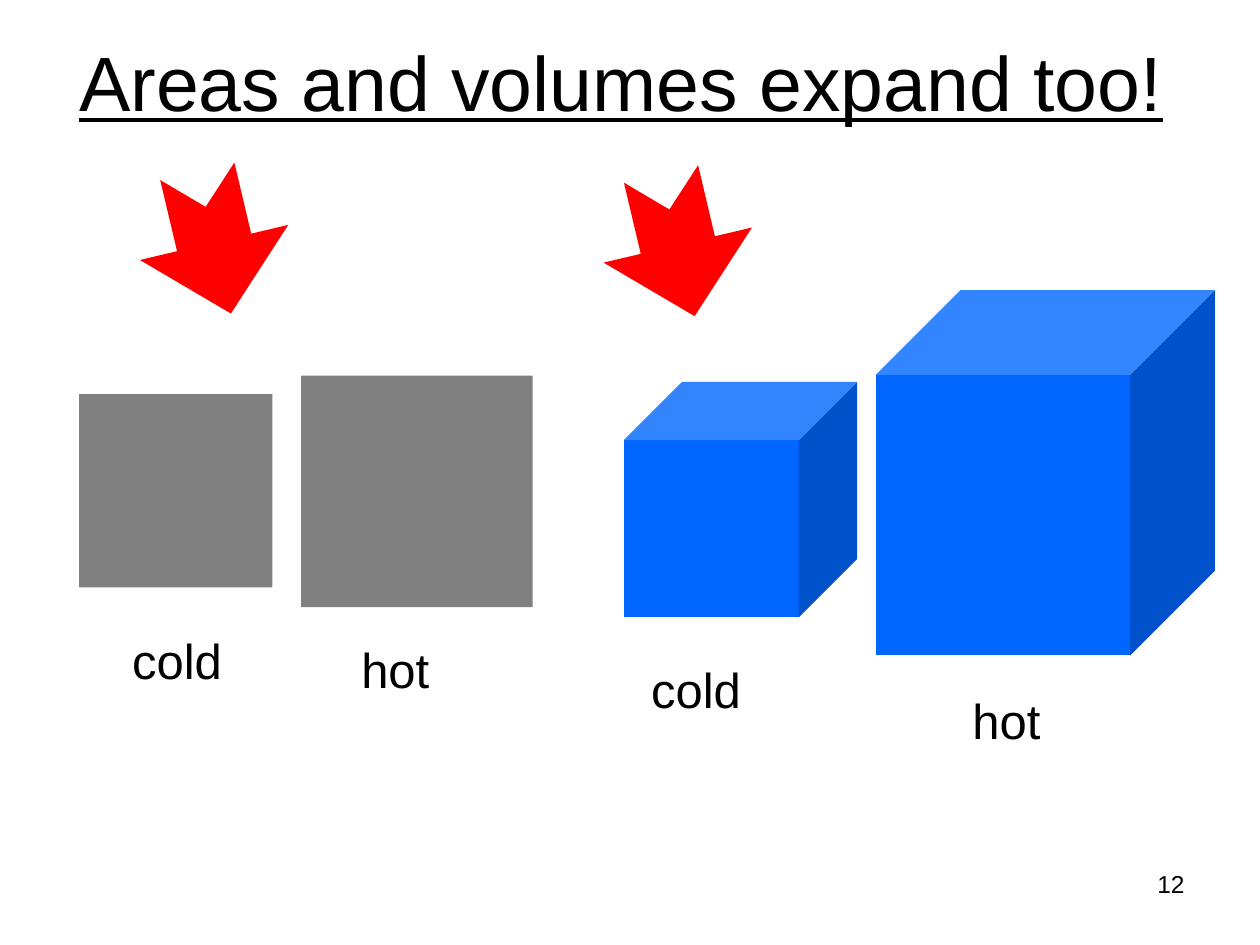
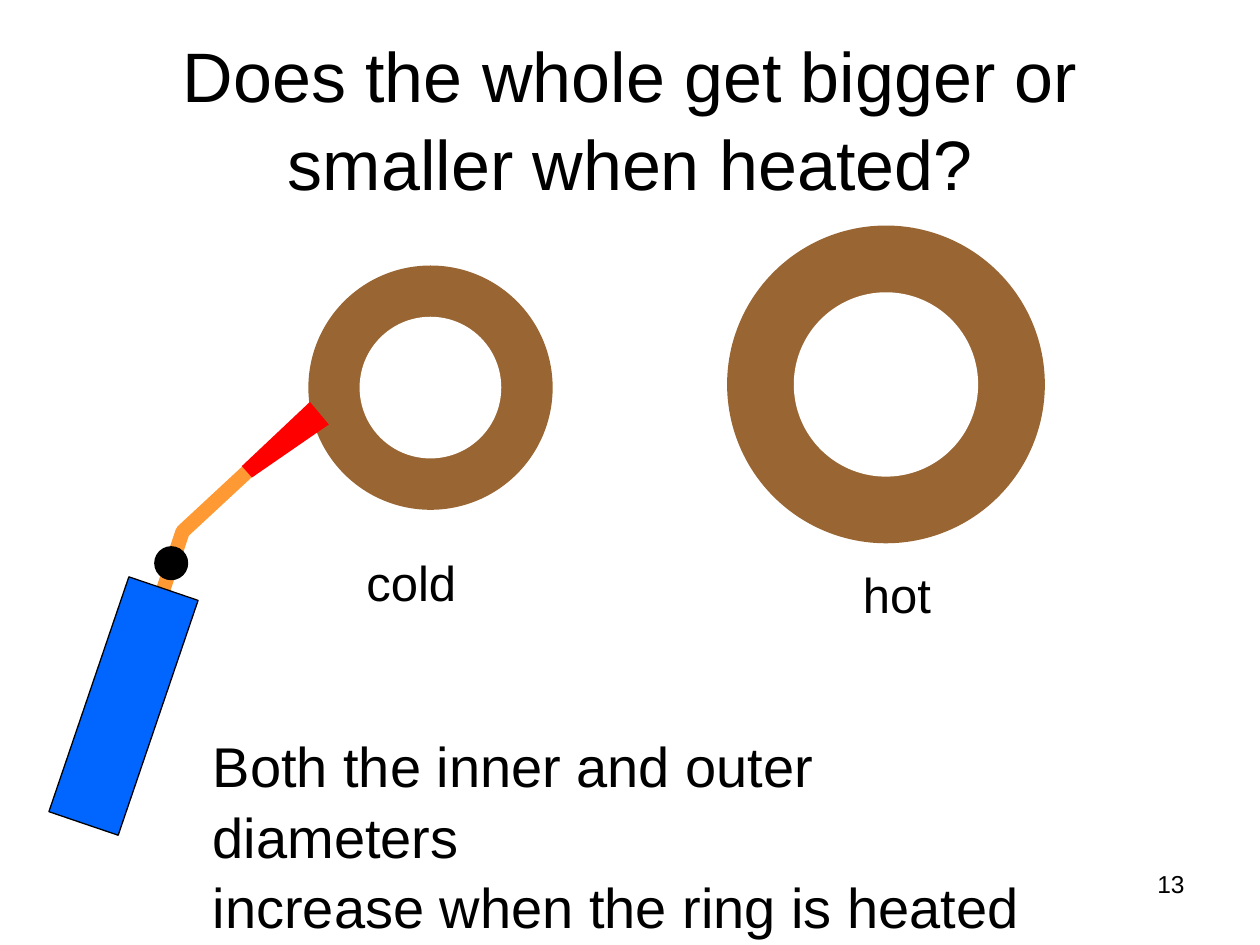
import pptx
import pptx.util
import pptx.dml.color
import pptx.enum.shapes
import pptx.enum.text
from dataclasses import dataclass

Pt = pptx.util.Pt
Shape = pptx.enum.shapes.MSO_SHAPE
Align = pptx.enum.text.PP_ALIGN
Anchor = pptx.enum.text.MSO_ANCHOR


@dataclass(frozen=True)
class Theme:
    font: str = "Arial"
    ink: str = "000000"
    paper: str = "FFFFFF"
    plate: str = "808080"
    blue: str = "0066FF"
    heat: str = "FF0000"
    ring: str = "996633"
    hose: str = "FF9933"
    label_size: float = 28
    answer_size: float = 32
    number_size: float = 14
    spacing: float = 1.05
    hole_ratio: float = 0.58
    outline: float = 0.75
    hose_width: float = 8.25


THEME = Theme()
LABEL_WIDTHS = {"cold": 66.2, "hot": 53.3}

EXPANSION = {
    "title": "Areas and volumes expand too!",
    "title_box": (31, 0, 648, 90),
    "title_font": {"size": Pt(44), "underline": True},
    "number": "12",
    "plates": [(45.2, 225.2, 110.4, 110.4), (172, 214.6, 132.4, 132.4)],
    "cubes": [(356.4, 218.2, 133.4, 134.6), (500.4, 165.8, 193.8, 208.8)],
    "arrows": [(80.6, 95, 83.5, 87.1), (345.6, 96.5, 83.5, 87.1)],
    "arrow_turn": 76.7,
    "labels": [("cold", 68.4, 355), ("hot", 199.4, 360),
               ("cold", 365, 371.5), ("hot", 548.6, 389.5)],
}

RING = {
    "title": "Does the whole get bigger or smaller when heated?",
    "title_box": (36, 21.6, 648, 90),
    "title_font": {"size": Pt(40)},
    "number": "13",
    "rings": [(246, 221.5, 139.6), (506.3, 219.7, 181.6)],
    "labels": [("cold", 202.3, 310.3), ("hot", 486, 317.5)],
    "answer": ["Both the inner and outer diameters",
               "increase when the ring is heated"],
    "answer_box": (114.5, 412.6, 500, 84),
    "hose": [(91.4, 342.7), (104.4, 303.8), (144.7, 266.4)],
    "flame": [(177.1, 229.7), (138.2, 266.4), (144, 272.9), (187.9, 242.6)],
    "valve": (88.5, 312.5, 18.7, 18.7),
    "tank": (49.7, 332.6, 41.8, 141.8),
    "tank_turn": 18.8,
}


def rgb(color):
    return pptx.dml.color.RGBColor.from_string(color)


def assign(target, values):
    for name, value in values.items():
        setattr(target, name, value)


def paint(shape, fill=None, line=None, width=THEME.outline):
    shape.shadow.inherit = False
    if fill:
        shape.fill.solid()
        shape.fill.fore_color.rgb = rgb(fill)
    else:
        shape.fill.background()
    if line:
        shape.line.color.rgb = rgb(line)
        shape.line.width = Pt(width)
    else:
        shape.line.fill.background()


def draw(shapes, kind, box, fill, line=None, turn=0):
    shape = shapes.add_shape(kind, *map(Pt, box))
    paint(shape, fill, line)
    shape.rotation = turn
    return shape


def trace(shapes, points, closed, **look):
    start, *rest = [(Pt(x), Pt(y)) for x, y in points]
    builder = shapes.build_freeform(*start)
    builder.add_line_segments(rest, close=closed)
    paint(builder.convert_to_shape(), **look)


def write(frame, lines, font, align=Align.LEFT, wrap=True, anchor=Anchor.TOP):
    assign(frame, {"word_wrap": wrap, "vertical_anchor": anchor,
                   "auto_size": pptx.enum.text.MSO_AUTO_SIZE.NONE})
    for index, line in enumerate(lines):
        paragraph = frame.add_paragraph() if index else frame.paragraphs[0]
        assign(paragraph, {"alignment": align, "line_spacing": THEME.spacing})
        run = paragraph.add_run()
        run.text = line
        assign(run.font, {"name": THEME.font, **font})
        run.font.color.rgb = rgb(THEME.ink)


def add_text(slide, box, lines, size, **layout):
    frame = slide.shapes.add_textbox(*map(Pt, box)).text_frame
    write(frame, lines, {"size": Pt(size)}, **layout)


def start_slide(deck, content):
    slide = deck.slides.add_slide(deck.slide_layouts[5])
    title = slide.shapes.title
    assign(title, dict(zip(("left", "top", "width", "height"),
                           map(Pt, content["title_box"]))))
    write(title.text_frame, [content["title"]], content["title_font"],
          align=Align.CENTER, anchor=Anchor.MIDDLE)
    for word, left, top in content["labels"]:
        add_text(slide, (left, top, LABEL_WIDTHS[word], 41), [word],
                 THEME.label_size, wrap=False)
    add_text(slide, (516, 492, 168, 37.5), [content["number"]],
             THEME.number_size, align=Align.RIGHT)
    return slide


def build_expansion(deck):
    shapes = start_slide(deck, EXPANSION).shapes
    for kind, part, fill, turn in [
        (Shape.RECTANGLE, "plates", THEME.plate, 0),
        (Shape.CUBE, "cubes", THEME.blue, 0),
        (Shape.NOTCHED_RIGHT_ARROW, "arrows", THEME.heat, EXPANSION["arrow_turn"]),
    ]:
        for box in EXPANSION[part]:
            draw(shapes, kind, box, fill, turn=turn)


def build_ring(deck):
    slide = start_slide(deck, RING)
    for x, y, outer in RING["rings"]:
        ring = slide.shapes.add_group_shape().shapes
        for size, fill in [(outer, THEME.ring),
                           (outer * THEME.hole_ratio, THEME.paper)]:
            draw(ring, Shape.OVAL, (x - size / 2, y - size / 2, size, size), fill)
    add_text(slide, RING["answer_box"], RING["answer"], THEME.answer_size)
    torch = slide.shapes.add_group_shape().shapes
    trace(torch, RING["hose"], False, line=THEME.hose, width=THEME.hose_width)
    trace(torch, RING["flame"], True, fill=THEME.heat)
    draw(torch, Shape.OVAL, RING["valve"], THEME.ink, THEME.ink)
    draw(torch, Shape.RECTANGLE, RING["tank"], THEME.blue, THEME.ink,
         RING["tank_turn"])


def main():
    deck = pptx.Presentation()
    assign(deck, {"slide_width": Pt(720), "slide_height": Pt(540)})
    build_expansion(deck)
    build_ring(deck)
    deck.save("out.pptx")


if __name__ == "__main__":
    main()
